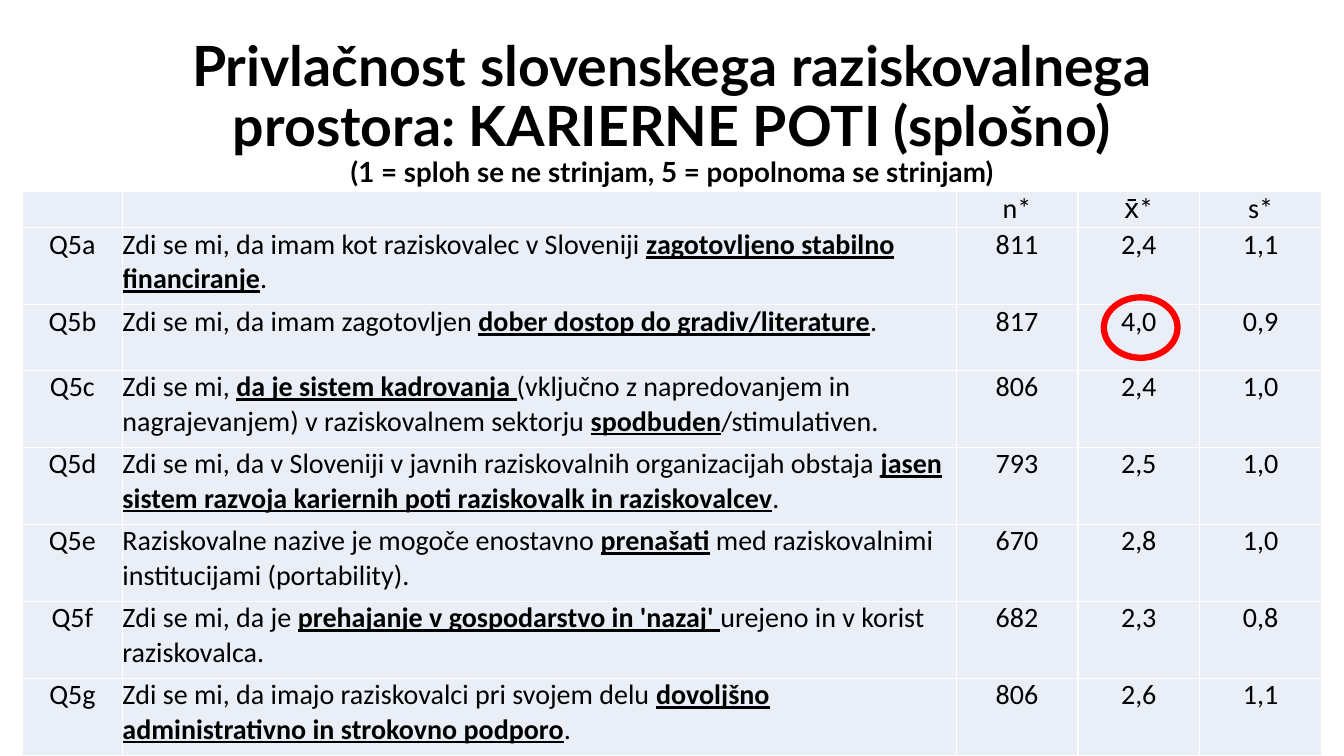
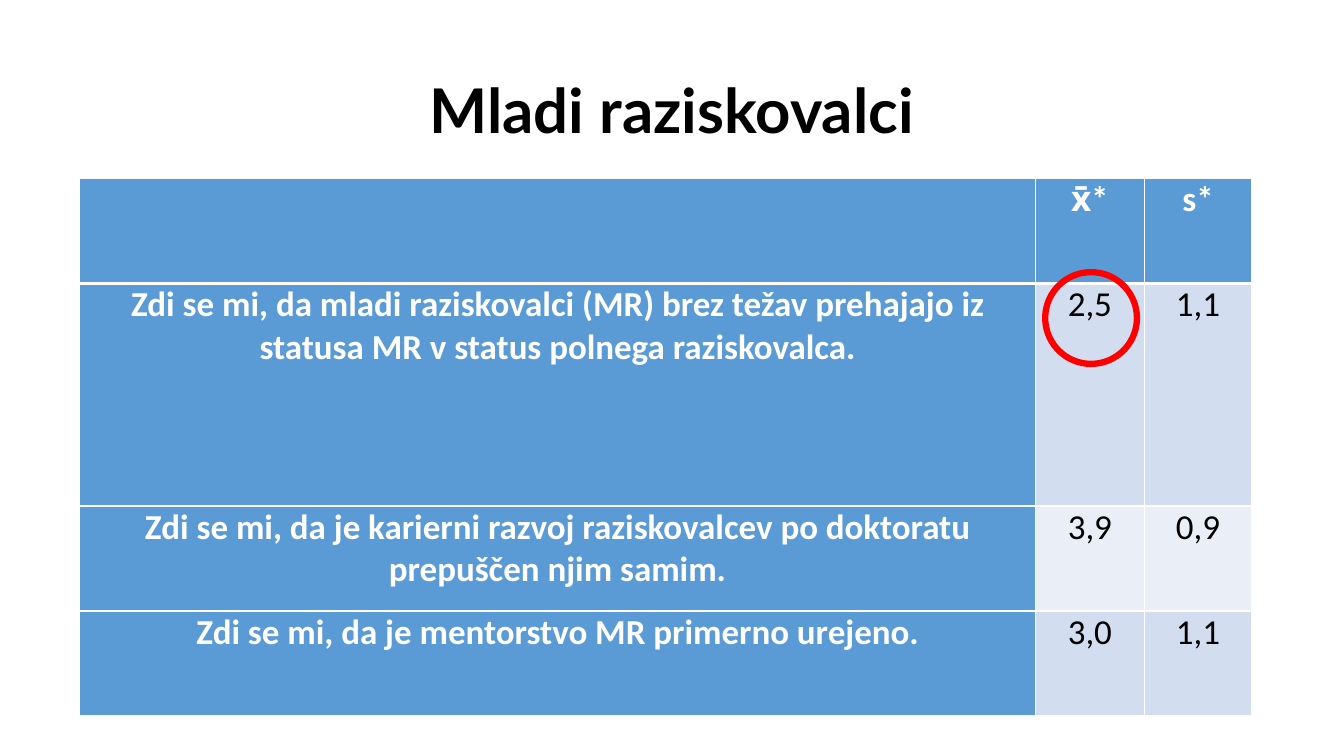
from lxml.etree import SubElement
from pptx import Presentation
from pptx.dml.color import RGBColor
from pptx.enum.shapes import MSO_SHAPE as Shape
from pptx.enum.text import MSO_ANCHOR as Anchor, PP_ALIGN as Align
from pptx.oxml.ns import qn
from pptx.util import Pt

BLACK, WHITE, RED = "000000", "FFFFFF", "FF0000"
BLUE, BLUE_MID, BLUE_PALE = "5B9BD5", "D2DEEF", "EAEFF7"
TITLE_FONT, TABLE_FONT = "Lato", "Calibri"
TITLE_BOX = (66, 28.8, 828, 104.4)

STATEMENTS = [
    ("", "", "n*", "x̄*", "s*"),
    ("Q5a", "Zdi se mi, da imam kot raziskovalec v Sloveniji |zagotovljeno stabilno financiranje|.",
     "811", "2,4", "1,1"),
    ("Q5b", "Zdi se mi, da imam zagotovljen |dober dostop do gradiv/literature|.",
     "817", "4,0", "0,9"),
    ("Q5c", "Zdi se mi, |da je sistem kadrovanja |(vključno z napredovanjem in nagrajevanjem) "
     "v raziskovalnem sektorju |spodbuden|/stimulativen.", "806", "2,4", "1,0"),
    ("Q5d", "Zdi se mi, da v Sloveniji v javnih raziskovalnih organizacijah obstaja "
     "|jasen sistem razvoja kariernih poti raziskovalk in raziskovalcev|.", "793", "2,5", "1,0"),
    ("Q5e", "Raziskovalne nazive je mogoče enostavno |prenašati| med raziskovalnimi "
     "institucijami (portability).", "670", "2,8", "1,0"),
    ("Q5f", "Zdi se mi, da je |prehajanje v gospodarstvo in 'nazaj' |urejeno in v korist raziskovalca.",
     "682", "2,3", "0,8"),
    ("Q5g", "Zdi se mi, da imajo raziskovalci pri svojem delu "
     "|dovoljšno administrativno in strokovno podporo|.", "806", "2,6", "1,1"),
]
YOUNG_RESEARCHERS = [
    ("", "x̄*", "s*"),
    ("Zdi se mi, da mladi raziskovalci (MR) brez težav prehajajo iz statusa MR "
     "v status polnega raziskovalca.", "2,5", "1,1"),
    ("Zdi se mi, da je karierni razvoj raziskovalcev po doktoratu prepuščen njim samim.",
     "3,9", "0,9"),
    ("Zdi se mi, da je mentorstvo MR primerno urejeno.", "3,0", "1,1"),
]


def rgb(color):
    return RGBColor.from_string(color)


def set_font(font, name, size, color, bold):
    font.name, font.size, font.bold = name, Pt(size), bold
    font.color.rgb = rgb(color)


def add_title(slide, text, size, subtitle="", subtitle_size=None):
    frame = slide.shapes.add_textbox(*map(Pt, TITLE_BOX)).text_frame
    frame.word_wrap = True
    frame.vertical_anchor = Anchor.MIDDLE
    paragraph = frame.paragraphs[0]
    paragraph.alignment = Align.CENTER
    paragraph.line_spacing = 0.9
    set_font(paragraph.font, TITLE_FONT, size, BLACK, True)
    paragraph.add_run().text = text
    if subtitle:
        paragraph.add_line_break()
        run = paragraph.add_run()
        run.text = subtitle
        run.font.size = Pt(subtitle_size)


def set_borders(cell, bottom, top):
    properties = cell._tc.get_or_add_tcPr()
    for side, width in (("lnL", 1), ("lnR", 1), ("lnT", top), ("lnB", bottom)):
        line = SubElement(properties, qn(f"a:{side}"), w=str(Pt(width)))
        fill = SubElement(line, qn("a:solidFill"))
        SubElement(fill, qn("a:srgbClr"), val=WHITE)


def fill_cell(cell, text, size, style, alignment):
    background, color, bold = style
    cell.margin_left = cell.margin_right = cell.margin_top = cell.margin_bottom = 0
    cell.fill.solid()
    cell.fill.fore_color.rgb = rgb(background)
    paragraph = cell.text_frame.paragraphs[0]
    paragraph.alignment = alignment
    set_font(paragraph.font, TABLE_FONT, size, color, bold)
    for index, part in enumerate(text.split("|")):
        if part:
            run = paragraph.add_run()
            run.text = part
            if index % 2:
                run.font.bold = run.font.underline = True


def add_grid(slide, left, top, widths, heights, rows, size, style_of, align_of, header_line=1):
    box = (left, top, sum(widths), sum(heights))
    table = slide.shapes.add_table(len(rows), len(widths), *map(Pt, box)).table
    table.first_row = table.horz_banding = False
    for column, width in zip(table.columns, widths):
        column.width = Pt(width)
    for r, (values, height) in enumerate(zip(rows, heights)):
        table.rows[r].height = Pt(height)
        for c, text in enumerate(values):
            cell = table.cell(r, c)
            set_borders(cell, header_line if r == 0 else 1, header_line if r == 1 else 1)
            fill_cell(cell, text, size, style_of(r, c), align_of(r, c))


def add_ring(slide, left, top, width, height):
    ring = slide.shapes.add_shape(Shape.OVAL, *map(Pt, (left, top, width, height)))
    ring.shadow.inherit = False
    ring.fill.background()
    ring.line.color.rgb = rgb(RED)
    ring.line.width = Pt(4.5)


def build_career_slide(slide, left, top):
    add_title(slide, "Privlačnost slovenskega raziskovalnega prostora: KARIERNE POTI (splošno)",
              39.6, "(1 = sploh se ne strinjam, 5 = popolnoma se strinjam)", 19.8)
    add_grid(slide, left, top, [71.5, 595.5] + [87] * 3, [25.7, 55, 46.8] + [55] * 5,
             STATEMENTS, 20,
             lambda r, c: (BLUE_PALE, BLACK, False),
             lambda r, c: Align.LEFT if c == 1 else Align.CENTER)
    add_ring(slide, left + 772.5, top + 75.4, 52.6, 43.2)


def young_style(r, c):
    if r == 0 or c == 0:
        return BLUE, WHITE, True
    return (BLUE_MID if r % 2 else BLUE_PALE), BLACK, False


def build_young_slide(slide, left, top):
    add_title(slide, "Mladi raziskovalci", 44)
    add_grid(slide, left, top, [682.5, 78, 76.5], [75, 159, 75, 75], YOUNG_RESEARCHERS, 25,
             young_style, lambda r, c: Align.CENTER, header_line=3)
    add_ring(slide, left + 689.6, top + 66.9, 65.5, 65.5)


def main():
    presentation = Presentation()
    presentation.slide_width, presentation.slide_height = Pt(960), Pt(540)
    blank = presentation.slide_layouts[6]
    build_career_slide(presentation.slides.add_slide(blank), 16, 137)
    build_young_slide(presentation.slides.add_slide(blank), 57, 127.5)
    presentation.save("out.pptx")


if __name__ == "__main__":
    main()
